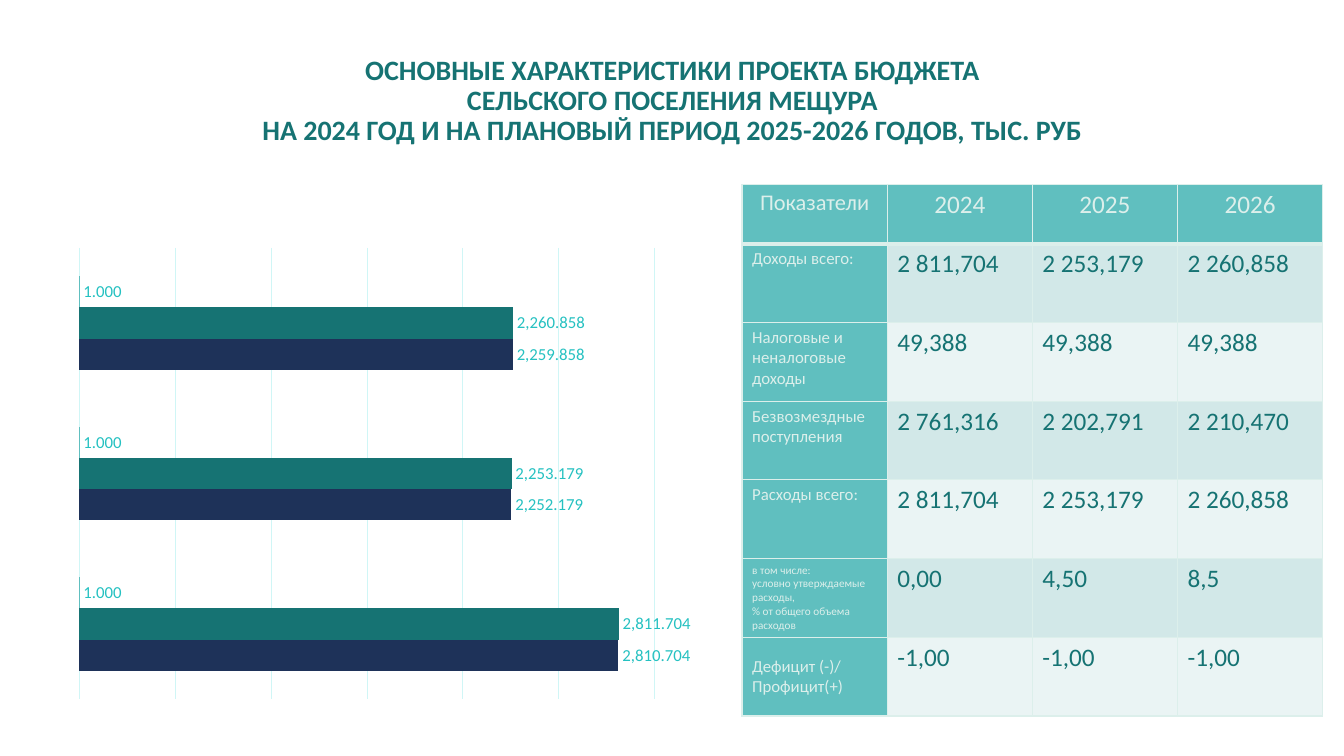
from pptx import Presentation
from pptx.chart.data import CategoryChartData
from pptx.dml.color import RGBColor
from pptx.enum.chart import XL_CHART_TYPE, XL_LABEL_POSITION
from pptx.enum.text import MSO_ANCHOR, PP_ALIGN
from pptx.oxml import parse_xml
from pptx.oxml.ns import nsdecls, qn
from pptx.util import Inches, Pt

BARS = XL_CHART_TYPE.BAR_CLUSTERED
OUTER = XL_LABEL_POSITION.OUTSIDE_END
MIDDLE, TOP = MSO_ANCHOR.MIDDLE, MSO_ANCHOR.TOP
CENTER, LEFT = PP_ALIGN.CENTER, PP_ALIGN.LEFT

COLORS = {
    "teal": "167373", "navy": "1E3259", "aqua": "60BFBF", "label": "25C1C1",
    "grid": "D0F6F6", "mint": "DCEFEB", "odd": "D2E8E8", "even": "EAF4F4",
}

TITLE = "\v".join([
    "ОСНОВНЫЕ ХАРАКТЕРИСТИКИ ПРОЕКТА БЮДЖЕТА",
    "СЕЛЬСКОГО ПОСЕЛЕНИЯ МЕЩУРА",
    "НА 2024 ГОД И НА ПЛАНОВЫЙ ПЕРИОД 2025-2026 ГОДОВ, ТЫС. РУБ",
])

SERIES = [
    ("Series 1", (2810.704, 2252.179, 2259.858), "navy"),
    ("Series 2", (2811.704, 2253.179, 2260.858), "teal"),
    ("Series 3", (1, 1, 1), "aqua"),
]

ROWS = [
    ("Показатели", "2024", "2025", "2026"),
    ("Доходы всего:", "2 811,704", "2 253,179", "2 260,858"),
    ("Налоговые и неналоговые доходы", "49,388", "49,388", "49,388"),
    ("Безвозмездные поступления", "2 761,316", "2 202,791", "2 210,470"),
    ("Расходы всего:", "2 811,704", "2 253,179", "2 260,858"),
    ("в том числе:\nусловно утверждаемые расходы,\n% от общего объема расходов",
     "0,00", "4,50", "8,5"),
    ("Дефицит (-)/ Профицит(+)", "-1,00", "-1,00", "-1,00"),
]
HEAD_SIZES = {0: 16, 5: 8}  # first-column sizes that differ from 12 pt


class Deck:
    face = "Calibri"

    def __init__(self, slide):
        self.slide = slide

    def color(self, name):
        return RGBColor.from_string(COLORS[name])

    def style(self, font, size, color, bold=False):
        font.name, font.size, font.bold = self.face, Pt(size), bold
        font.color.rgb = self.color(color)

    def put(self, frame, text, size, color, align=LEFT, bold=False):
        frame.text = text
        for para in frame.paragraphs:
            para.alignment = align
            for run in para.runs:
                self.style(run.font, size, color, bold)

    def title(self, text, box):
        shape = self.slide.shapes.title
        shape.left, shape.top, shape.width, shape.height = map(Inches, box)
        frame = shape.text_frame
        frame.vertical_anchor = MIDDLE
        frame.word_wrap = True
        self.put(frame, text, 20, "teal", CENTER, True)
        frame.paragraphs[0].line_spacing = 0.9

    def chart(self, series, box, plot):
        data = CategoryChartData(number_format="#,##0.000")
        data.categories = ["1", "2", "3"]
        for name, values, _ in series:
            data.add_series(name, values)
        chart = self.slide.shapes.add_chart(BARS, *map(Inches, box), data).chart
        chart.has_title = chart.has_legend = False
        self.style(chart.font, 10, "teal")

        # Hidden axes with light grid lines
        chart.category_axis.visible = False
        axis = chart.value_axis
        axis.visible = False
        axis.minimum_scale, axis.maximum_scale, axis.major_unit = 0, 3000, 500
        axis.has_major_gridlines = True
        line = axis.major_gridlines.format.line
        line.color.rgb, line.width = self.color("grid"), Pt(0.75)

        # Bars and their labels
        bars = chart.plots[0]
        bars.gap_width, bars.overlap, bars.vary_by_categories = 182, 0, False
        for item, (_, _, color) in zip(bars.series, series):
            item.format.fill.solid()
            item.format.fill.fore_color.rgb = self.color(color)
            labels = item.data_labels
            labels.show_value, labels.position = True, OUTER
            labels.number_format = "#,##0.000"
            labels.number_format_is_linked = False
            self.style(labels.font, 12, "label")

        # Fixed inner plot area
        area = chart.element.find(".//" + qn("c:plotArea"))
        for old in area.findall(qn("c:layout")):
            area.remove(old)
        sizes = "".join(f'<c:{key} val="{val}"/>' for key, val in zip("xywh", plot))
        area.insert(0, parse_xml(
            f'<c:layout {nsdecls("c")}><c:manualLayout><c:layoutTarget val="inner"/>'
            f'<c:xMode val="edge"/><c:yMode val="edge"/>{sizes}'
            '</c:manualLayout></c:layout>'))

    def border(self, cell, base):
        props = cell._tc.get_or_add_tcPr()
        for side in "LRTB":
            width = Pt(base if side == "B" else 1)
            props.append(parse_xml(
                f'<a:ln{side} {nsdecls("a")} w="{width}"><a:solidFill>'
                f'<a:srgbClr val="{COLORS["mint"]}"/></a:solidFill></a:ln{side}>'))

    def table(self, rows, box, top):
        table = self.slide.shapes.add_table(
            len(rows), len(rows[0]), *map(Inches, box)).table
        for col in table.columns:
            col.width = Inches(box[2] / len(rows[0]))
        rest = (box[3] - top) / (len(rows) - 1)
        for i, row in enumerate(rows):
            table.rows[i].height = Inches(rest if i else top)
            for j, text in enumerate(row):
                cell = table.cell(i, j)
                head = i == 0 or j == 0
                size = 18 if j else HEAD_SIZES.get(i, 12)
                self.put(cell.text_frame, text, size, "mint" if head else "teal",
                         LEFT if i else CENTER)
                last = i == len(rows) - 1 and j == 0
                cell.vertical_anchor = MIDDLE if last else TOP
                self.border(cell, 1 if i else 3)
                cell.fill.solid()
                band = "odd" if i % 2 else "even"
                cell.fill.fore_color.rgb = self.color("aqua" if head else band)


def main():
    prs = Presentation()
    prs.slide_width, prs.slide_height = Inches(13.33), Inches(7.5)
    deck = Deck(prs.slides.add_slide(prs.slide_layouts[5]))
    deck.title(TITLE, (0.92, 0.16, 11.5, 1.69))
    deck.chart(SERIES, (0.32, 1.88, 6.64, 5.27), (0.07, 0.11, 0.86, 0.85))
    deck.table(ROWS, (7.36, 1.83, 5.76, 5.27), 0.59)
    prs.save("out.pptx")


if __name__ == "__main__":
    main()
